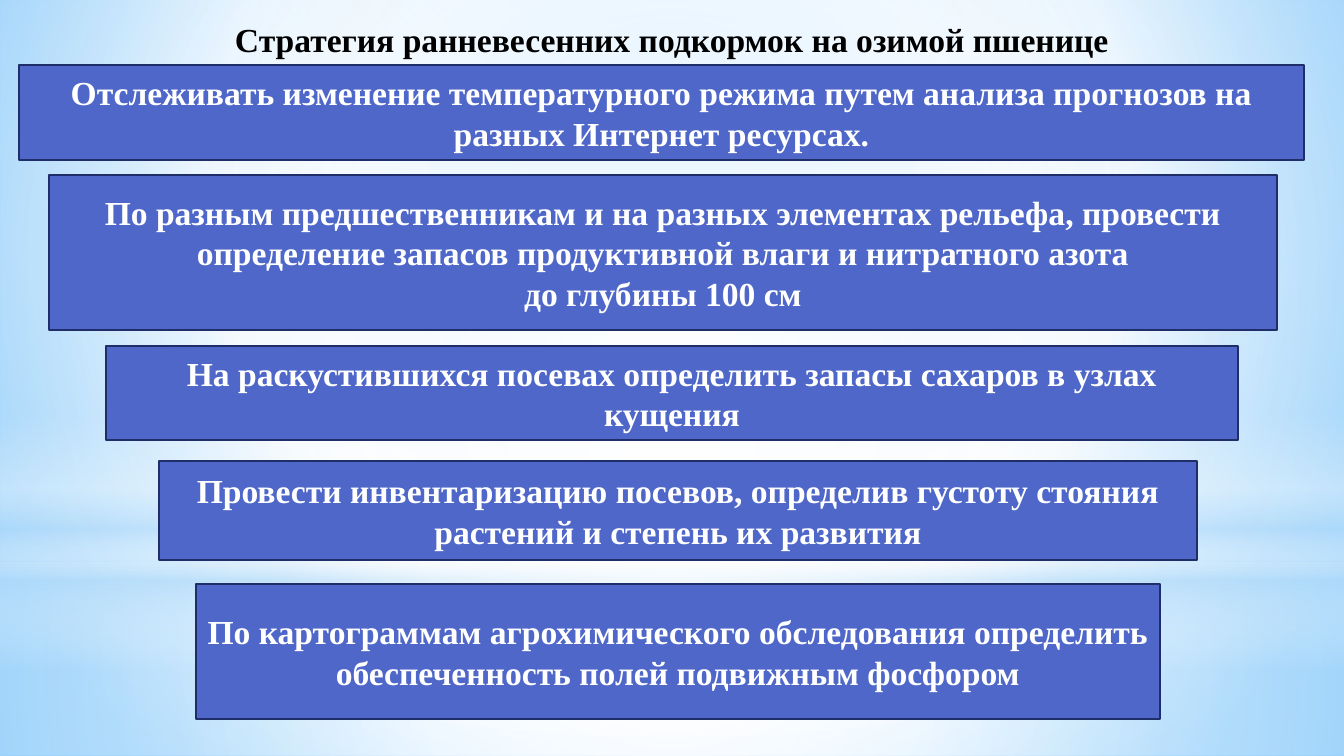
from lxml.etree import SubElement as Sub
from pptx import Presentation
from pptx.dml.color import RGBColor
from pptx.enum.shapes import MSO_SHAPE as Shape
from pptx.enum.text import MSO_ANCHOR as Anchor, PP_ALIGN as Align
from pptx.oxml.ns import qn
from pptx.util import Pt

WIDE, HIGH = 1344, 756
SCALE = 9144000 / WIDE
FONT = {"name": "Times New Roman", "size": Pt(18), "bold": True}
MID = (50, 50, 50, 50)

TITLE = "Стратегия ранневесенних подкормок на озимой пшенице"
STEPS = [
    ((19, 65, 1285, 95),
     ["Отслеживать изменение температурного режима путем анализа "
      "прогнозов на разных Интернет ресурсах."]),
    ((49, 175, 1228, 155),
     ["По разным предшественникам и на разных элементах рельефа, провести "
      "определение запасов продуктивной влаги и нитратного азота",
      "до глубины 100 см"]),
    ((106, 346, 1132, 94),
     ["На раскустившихся посевах определить запасы сахаров в узлах кущения"]),
    ((159, 461, 1038, 99),
     ["Провести инвентаризацию посевов, определив густоту стояния "
      "растений и степень их развития"]),
    ((196, 584, 964, 135),
     ["По картограммам агрохимического обследования определить "
      "обеспеченность полей подвижным фосфором"]),
]

# Backdrop layers: preset, box, stops (place, colour, opacity), centre
LAYERS = [
    (Shape.RECTANGLE, (0, 563, WIDE, 193),
     [(0, "FFFFFF", 91), (37, "FFFFFF", 76), (100, "B4DCFA", 79)], MID),
    (Shape.RECTANGLE, (0, 0, WIDE, 563),
     [(0, "FFFFFF", 89), (48, "FFFFFF", 62), (100, "B4DCFA", 79)], MID),
    (Shape.RECTANGLE, (0, 415, WIDE, 253),
     [(0, "FFFFFF", 0), (29, "FFFFFF", 30), (45, "B4DCFA", 40),
      (55, "FFFFFF", 26), (65, "B4DCFA", 60), (100, "FFFFFF", 0)], None),
    (Shape.OVAL, (0, 176, WIDE, 563),
     [(0, "FFFFFF", 100), (56, "FFFFFF", 0)], MID),
]


def px(n):
    return round(n * SCALE)


def rgb(code):
    return RGBColor.from_string(code)


def blend(owner, fill, stops, focus):
    """Radial gradient around focus, or top to bottom without one."""
    fill.gradient()
    grad = next(owner.element.iter(qn("a:gradFill")))
    for part in list(grad):
        grad.remove(part)
    row = Sub(grad, qn("a:gsLst"))
    for place, code, alpha in stops:
        stop = Sub(row, qn("a:gs"), pos=str(place * 1000))
        tint = Sub(stop, qn("a:srgbClr"), val=code)
        Sub(tint, qn("a:alpha"), val=str(alpha * 1000))
    if focus:
        way = Sub(grad, qn("a:path"), path="circle")
        edges = {k: str(v * 1000) for k, v in zip("ltrb", focus)}
        Sub(way, qn("a:fillToRect"), **edges)
    else:
        Sub(grad, qn("a:lin"), ang="5400000", scaled="0")


def write(shape, lines, code, anchor):
    frame = shape.text_frame
    look = {"word_wrap": True, "vertical_anchor": anchor,
            "margin_left": px(9), "margin_right": px(9),
            "margin_top": px(5), "margin_bottom": px(5)}
    for key, val in look.items():
        setattr(frame, key, val)
    frame.text = "\n".join(lines)
    for para in frame.paragraphs:
        para.alignment = Align.CENTER
        for key, val in FONT.items():
            setattr(para.font, key, val)
        para.font.color.rgb = rgb(code)


def add_back(slide):
    blend(slide, slide.background.fill,
          [(0, "9ED5FF", 100), (60, "FFFFFF", 100), (100, "5BB9FF", 100)],
          (20, 10, 20, 60))
    for kind, box, stops, focus in LAYERS:
        layer = slide.shapes.add_shape(kind, *map(px, box))
        layer.shadow.inherit = False
        layer.line.fill.background()
        blend(layer, layer.fill, stops, focus)


def add_title(slide, box):
    title = slide.shapes.title
    for key, val in zip(("left", "top", "width", "height"), box):
        setattr(title, key, px(val))
    write(title, [TITLE], "000000", Anchor.TOP)
    # Bring the title in front of the backdrop
    slide.shapes.element.append(title.element)


def add_step(slide, box, lines):
    bar = slide.shapes.add_shape(Shape.RECTANGLE, *map(px, box))
    bar.shadow.inherit = False
    bar.fill.solid()
    bar.fill.fore_color.rgb = rgb("4E67C8")
    bar.line.color.rgb = rgb("1F2E69")
    bar.line.width = Pt(1.25)
    write(bar, lines, "FFFFFF", Anchor.MIDDLE)


def main():
    deck = Presentation()
    deck.slide_width, deck.slide_height = px(WIDE), px(HIGH)
    slide = deck.slides.add_slide(deck.slide_layouts[5])
    add_back(slide)
    add_title(slide, (0, 14, WIDE, 51))
    for box, lines in STEPS:
        add_step(slide, box, lines)
    deck.save("out.pptx")


if __name__ == "__main__":
    main()
